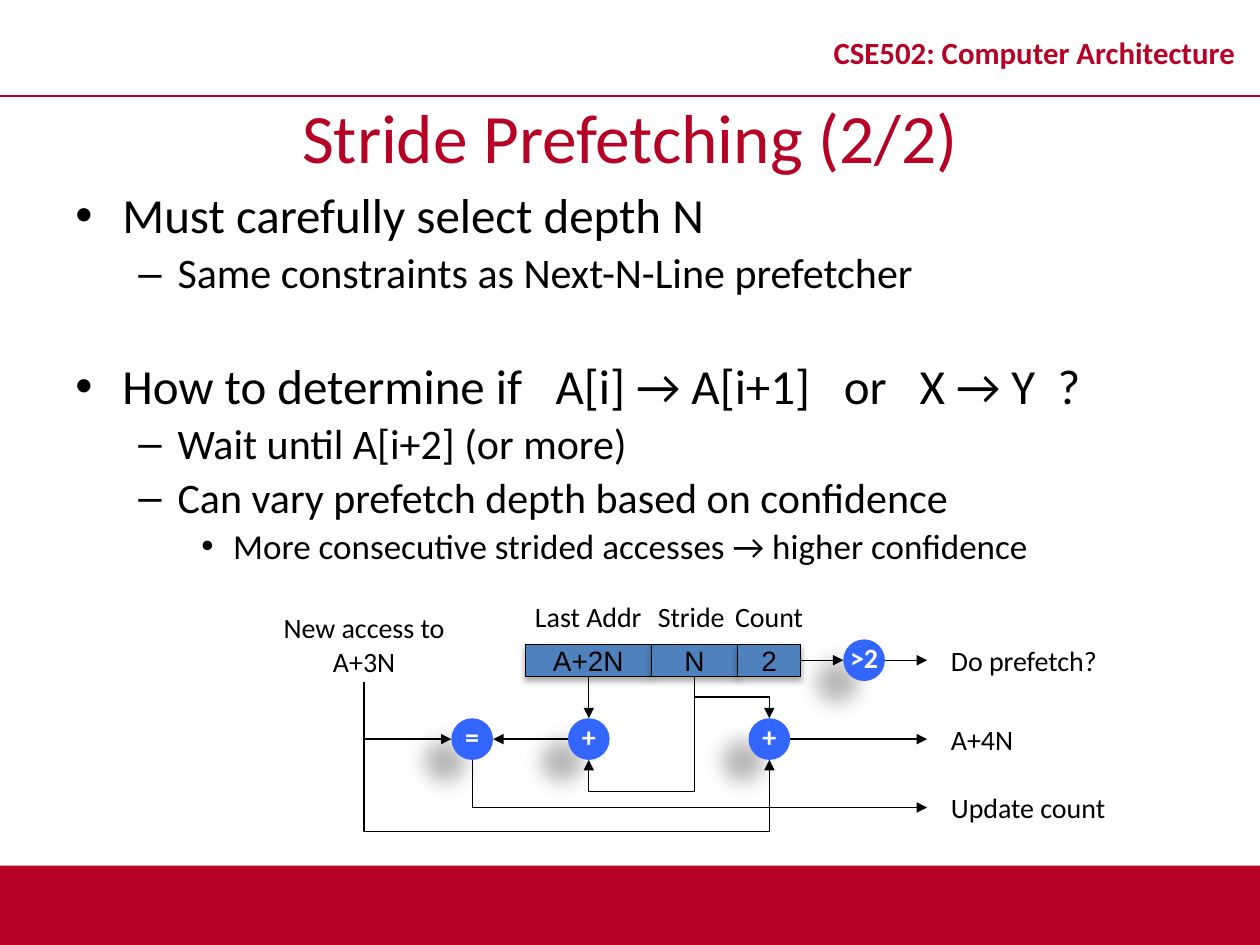
"""Build the stride prefetching slide."""
import lxml.etree
import pptx
import pptx.dml.color
import pptx.enum.shapes
import pptx.enum.text
import pptx.oxml.ns
import pptx.util

Cm = pptx.util.Cm
Pt = pptx.util.Pt
RGBColor = pptx.dml.color.RGBColor
MSO_SHAPE = pptx.enum.shapes.MSO_SHAPE
PP_ALIGN = pptx.enum.text.PP_ALIGN
MSO_ANCHOR = pptx.enum.text.MSO_ANCHOR
qn = pptx.oxml.ns.qn

RED = RGBColor(0xB6, 0x02, 0x25)
BLACK = RGBColor(0, 0, 0)
WHITE = RGBColor(0xFF, 0xFF, 0xFF)
STEEL = RGBColor(0x4F, 0x81, 0xBD)
BLUE = RGBColor(0x33, 0x66, 0xFF)

BAR_SHADOW = (35, 3.1, 1.8, 90)
CELL_SHADOW = (32, 3.5, 2.2, 90)
NODE_SHADOW = (28, 11.8, 19.7, 141)

BULLETS = {0: ("•", 0.95, 0.95, 28), 1: ("–", 2.06, 0.79, 24), 2: ("•", 3.18, 0.64, 20)}


def sub(parent, tag, **attrs):
    el = lxml.etree.SubElement(parent, qn(tag))
    for key, value in attrs.items():
        el.set(key, str(value))
    return el


def write(tf, text, size=16, color=BLACK, font="Calibri", bold=False,
          align=PP_ALIGN.LEFT, level=None, spacing=None, before=None, tabs=()):
    p = tf.paragraphs[0]
    if p.runs:
        p = tf.add_paragraph()
    p.alignment = align
    if level is not None:
        char, left, hang, size = BULLETS[level]
        p.level = level
        pPr = p._p.get_or_add_pPr()
        pPr.set("marL", str(Cm(left)))
        pPr.set("indent", str(-Cm(hang)))
        sub(pPr, "a:buFont", typeface="Arial")
        sub(pPr, "a:buChar", char=char)
        if tabs:
            tab_list = sub(pPr, "a:tabLst")
            for pos in tabs:
                sub(tab_list, "a:tab", pos=Cm(pos), algn="l")
    if spacing:
        p.line_spacing = spacing
    if before:
        p.space_before = Pt(before)
    r = p.add_run()
    r.text = text
    r.font.name = font
    r.font.size = Pt(size)
    r.font.bold = bold
    r.font.color.rgb = color


class SlideBuilder:
    def __init__(self, slide, line_width=0.75):
        self.s = slide
        self.line_width = line_width

    def text(self, x, y, w, h, lines=(), anchor=MSO_ANCHOR.TOP, margin=0.25, **fmt):
        tf = self.s.shapes.add_textbox(Cm(x), Cm(y), Cm(w), Cm(h)).text_frame
        tf.word_wrap = True
        tf.vertical_anchor = anchor
        tf.margin_left = tf.margin_right = Cm(margin)
        for line in lines:
            write(tf, line, **fmt)
        return tf

    def shape(self, kind, x, y, w, h, fill, shadow, text="", outline=False, bottom=0, **fmt):
        sp = self.s.shapes.add_shape(kind, Cm(x), Cm(y), Cm(w), Cm(h))
        sp.fill.solid()
        sp.fill.fore_color.rgb = fill
        if outline:
            sp.line.color.rgb = BLACK
            sp.line.width = Pt(self.line_width)
        else:
            sp.line.fill.background()
        sp.shadow.inherit = False
        alpha, blur, dist, angle = shadow
        shdw = sub(sp._element.spPr.find(qn("a:effectLst")), "a:outerShdw", blurRad=Pt(blur),
                   dist=Pt(dist), dir=angle * 60000, algn="ctr", rotWithShape=0)
        sub(sub(shdw, "a:srgbClr", val=BLACK), "a:alpha", val=alpha * 1000)
        if text:
            tf = sp.text_frame
            tf.word_wrap = False
            tf.vertical_anchor = MSO_ANCHOR.MIDDLE
            tf.margin_top = 0
            tf.margin_bottom = Cm(bottom)
            write(tf, text, align=PP_ALIGN.CENTER, **fmt)

    def cell(self, x, w, text):
        self.shape(MSO_SHAPE.RECTANGLE, x, 13, w, 0.64, STEEL, CELL_SHADOW, text,
                   outline=True, font="Arial")

    def node(self, x, y, text):
        self.shape(MSO_SHAPE.OVAL, x - RADIUS, y - RADIUS, 2 * RADIUS, 2 * RADIUS, BLUE,
                   NODE_SHADOW, text, bottom=0.13, color=WHITE, bold=True)

    def line(self, *points, color=BLACK, width=None, arrow=True):
        pts = [(Cm(x), Cm(y)) for x, y in points]
        if len(pts) == 2:
            sp = self.s.shapes.add_connector(
                pptx.enum.shapes.MSO_CONNECTOR.STRAIGHT, *pts[0], *pts[1])
        else:
            builder = self.s.shapes.build_freeform(*pts[0])
            builder.add_line_segments(pts[1:], close=False)
            sp = builder.convert_to_shape()
            sp.fill.background()
        sp.line.color.rgb = color
        sp.line.width = Pt(width or self.line_width)
        if arrow:
            sub(sp.line._get_or_add_ln(), "a:tailEnd", type="triangle")
        sub(sp._element.spPr, "a:effectLst")


RADIUS = 0.42
ACCESS_X, EQUAL_X, ADDR_X, STRIDE_X, SUM_X, CHECK_X = 7.34, 9.52, 11.87, 14, 15.51, 17.42
CELL_Y, NODE_Y, UPDATE_Y = 13.31, 14.9, 16.28
CELL_BOTTOM, CELL_RIGHT, OUT_X = 13.64, 16.14, 18.69


def main():
    prs = pptx.Presentation()
    prs.slide_width, prs.slide_height = Cm(25.4), Cm(19.05)
    b = SlideBuilder(prs.slides.add_slide(prs.slide_layouts[6]))
    center = PP_ALIGN.CENTER

    b.shape(MSO_SHAPE.RECTANGLE, 0, 17.45, 25.4, 1.6, RED, BAR_SHADOW)
    b.line((0, 1.93), (25.4, 1.93), color=RED, width=1, arrow=False)
    b.text(16.31, 0.33, 9.09, 1.6, ["CSE502: Computer Architecture"], MSO_ANCHOR.MIDDLE,
           size=17.6, color=RED, bold=True, align=center, spacing=0.8)
    b.text(0, 1.93, 25.4, 1.6, ["Stride Prefetching (2/2)"], MSO_ANCHOR.MIDDLE,
           size=39.6, color=RED, align=center)

    body = b.text(1.27, 3.73, 22.86, 13.59)
    for level, before, text, tabs in [
        (0, None, "Must carefully select depth N", ()),
        (1, 4.8, "Same constraints as Next-N-Line prefetcher", ()),
        (0, 36.5, "How to determine if\tA[i] → A[i+1]\tor\tX → Y\t?", (9.68, 15.49, 17.02, 19.8)),
        (1, 4.8, "Wait until A[i+2] (or more)", ()),
        (1, 4.8, "Can vary prefetch depth based on confidence", ()),
        (2, 4, "More consecutive strided accesses → higher confidence", ()),
    ]:
        write(body, text, level=level, before=before, spacing=0.9, tabs=tabs)

    b.text(5.31, 12.19, 4.06, 1.63, ["New access to", "A+3N"], align=center)
    for x, w, margin, text in [(10.59, 2.54, 0, "Last Addr"), (12.93, 2.01, 0.25, "Stride"),
                               (14.45, 2.11, 0.25, "Count")]:
        b.text(x, 11.96, w, 0.94, [text], margin=margin, align=center)
    for y, text in [(CELL_Y, "Do prefetch?"), (NODE_Y, "A+4N"), (UPDATE_Y, "Update count")]:
        b.text(18.92, y - 0.46, 4, 0.94, [text])

    for x, w, text in [(10.59, 2.54, "A+2N"), (13.13, 1.74, "N"), (14.87, 1.27, "2")]:
        b.cell(x, w, text)
    for x, y, text in [(EQUAL_X, NODE_Y, "="), (ADDR_X, NODE_Y, "+"),
                       (SUM_X, NODE_Y, "+"), (CHECK_X, CELL_Y, ">2")]:
        b.node(x, y, text)

    top, bottom = NODE_Y - RADIUS, NODE_Y + RADIUS
    b.line((CELL_RIGHT, CELL_Y), (CHECK_X - RADIUS, CELL_Y))
    b.line((CHECK_X + RADIUS, CELL_Y), (OUT_X, CELL_Y))
    b.line((SUM_X + RADIUS, NODE_Y), (OUT_X, NODE_Y))
    b.line((ADDR_X - RADIUS, NODE_Y), (EQUAL_X + RADIUS, NODE_Y))
    b.line((ACCESS_X, NODE_Y), (EQUAL_X - RADIUS, NODE_Y))
    b.line((ADDR_X, CELL_BOTTOM), (ADDR_X, top))
    b.line((STRIDE_X, CELL_BOTTOM), (STRIDE_X, 14.05), (SUM_X, 14.05), (SUM_X, top))
    b.line((STRIDE_X, CELL_BOTTOM), (STRIDE_X, 15.95), (ADDR_X, 15.95), (ADDR_X, bottom))
    b.line((ACCESS_X, 13.74), (ACCESS_X, 16.76), (SUM_X, 16.76), (SUM_X, bottom))
    b.line((EQUAL_X, bottom), (EQUAL_X, UPDATE_Y), (OUT_X, UPDATE_Y))

    prs.save("out.pptx")


if __name__ == "__main__":
    main()
